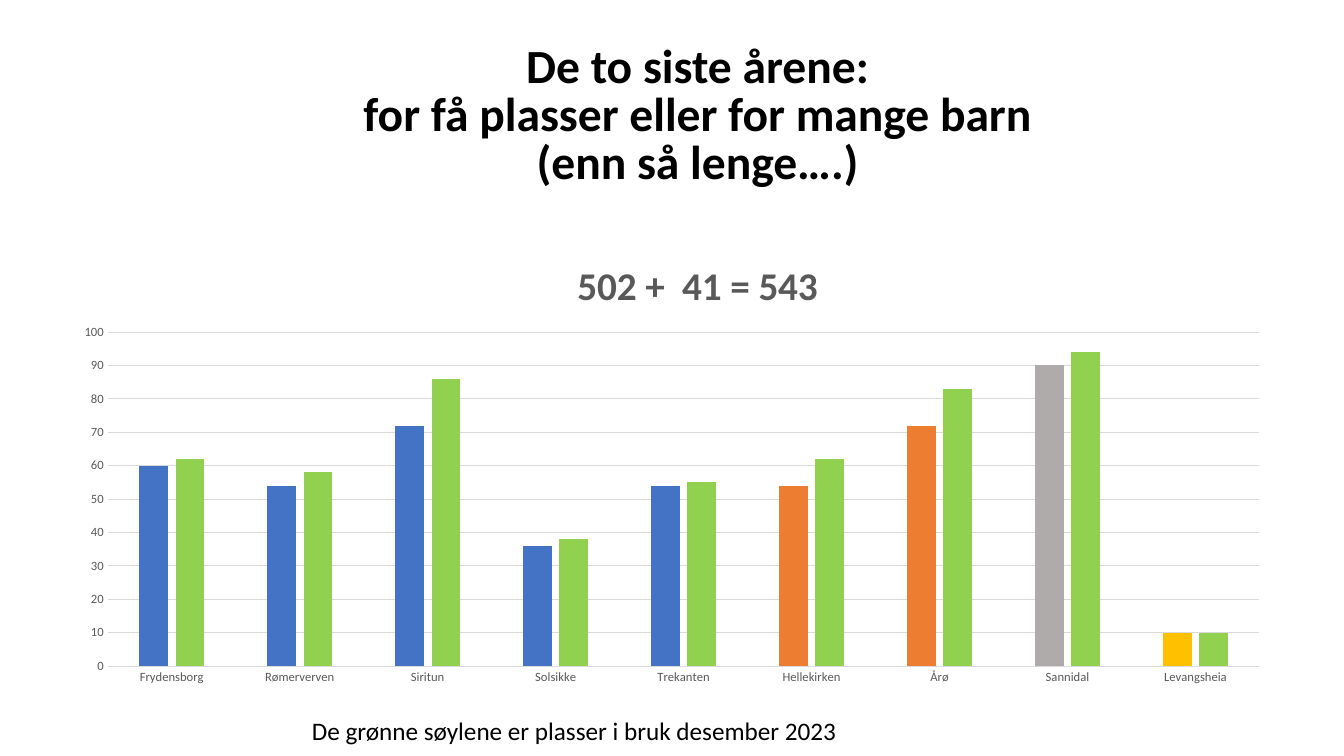
from dataclasses import dataclass

from lxml import etree
from pptx import Presentation
from pptx.chart.data import CategoryChartData
from pptx.dml.color import RGBColor
from pptx.enum.chart import XL_CHART_TYPE, XL_TICK_MARK
from pptx.enum.text import MSO_ANCHOR, PP_ALIGN
from pptx.oxml.ns import qn
from pptx.util import Emu, Pt

CLUSTERED = XL_CHART_TYPE.COLUMN_CLUSTERED
NO_TICK = XL_TICK_MARK.NONE
TOP, MIDDLE = MSO_ANCHOR.TOP, MSO_ANCHOR.MIDDLE
LEFT, CENTER = PP_ALIGN.LEFT, PP_ALIGN.CENTER
EMU_PER_PX = 914400 / 100.8


@dataclass(frozen=True)
class Theme:
    font: str = "Calibri"
    ink: str = "000000"
    muted: str = "595959"
    grid: str = "D9D9D9"
    blue: str = "4472C4"
    orange: str = "ED7D31"
    grey: str = "AFABAB"
    yellow: str = "FFC000"
    green: str = "92D050"
    heading_size: int = 34
    sum_size: int = 28
    caption_size: int = 18
    axis_size: int = 9


THEME = Theme()

# Kindergarten, places, places in use, colour of the places column
KINDERGARTENS = [
    ("Frydensborg", 60, 62, THEME.blue),
    ("Rømerverven", 54, 58, THEME.blue),
    ("Siritun", 72, 86, THEME.blue),
    ("Solsikke", 36, 38, THEME.blue),
    ("Trekanten", 54, 55, THEME.blue),
    ("Hellekirken", 54, 62, THEME.orange),
    ("Årø", 72, 83, THEME.orange),
    ("Sannidal", 90, 94, THEME.grey),
    ("Levangsheia", 10, 10, THEME.yellow),
]


def px(length):
    return Emu(round(length * EMU_PER_PX))


def style_font(font, size, color, bold=False):
    font.name = THEME.font
    font.size = Pt(size)
    font.bold = bold
    font.color.rgb = RGBColor.from_string(color)


def paint(fill, color):
    fill.solid()
    fill.fore_color.rgb = RGBColor.from_string(color)


def style_line(line, color):
    paint(line.fill, color)
    line.width = Pt(0.75)


def add_text(slide, box, lines, size, bold=False, align=LEFT, anchor=TOP,
             line_spacing=None, space_after=0):
    frame = slide.shapes.add_textbox(*map(px, box)).text_frame
    frame.word_wrap = True
    frame.vertical_anchor = anchor
    for index, line in enumerate(lines):
        paragraph = frame.add_paragraph() if index else frame.paragraphs[0]
        paragraph.alignment = align
        paragraph.line_spacing = line_spacing
        paragraph.space_after = Pt(space_after)
        run = paragraph.add_run()
        run.text = line
        style_font(run.font, size, THEME.ink, bold)


def place_manually(parent, index, **settings):
    """Give a chart part a fixed place, as fractions of the chart."""
    for old in parent.findall(qn("c:layout")):
        parent.remove(old)
    layout = etree.Element(qn("c:layout"))
    manual = etree.SubElement(layout, qn("c:manualLayout"))
    for tag, value in settings.items():
        etree.SubElement(manual, qn(f"c:{tag}")).set("val", str(value))
    parent.insert(index, layout)


def style_axes(chart):
    for axis in (chart.category_axis, chart.value_axis):
        axis.major_tick_mark = axis.minor_tick_mark = NO_TICK
        style_font(axis.tick_labels.font, THEME.axis_size, THEME.muted)
    style_line(chart.category_axis.format.line, THEME.grid)
    values = chart.value_axis
    values.minimum_scale, values.maximum_scale, values.major_unit = 0, 100, 10
    values.format.line.fill.background()
    style_line(values.major_gridlines.format.line, THEME.grid)


def add_places_chart(slide, box, title):
    names, places, in_use, colors = zip(*KINDERGARTENS)
    data = CategoryChartData()
    data.categories = names
    data.add_series("Series 1", places)
    data.add_series("Series 2", in_use)
    chart = slide.shapes.add_chart(CLUSTERED, *map(px, box), data).chart
    style_font(chart.font, 10, THEME.ink)
    chart.has_legend = False
    style_axes(chart)

    plot = chart.plots[0]
    plot.vary_by_categories = False
    plot.gap_width, plot.overlap = 219, -27
    places_series, in_use_series = plot.series
    paint(places_series.format.fill, THEME.blue)
    paint(in_use_series.format.fill, THEME.green)
    for index, color in enumerate(colors):
        if color != THEME.blue:
            paint(places_series.points[index].format.fill, color)

    chart.has_title = True
    heading = chart.chart_title.text_frame.paragraphs[0].add_run()
    heading.text = title
    style_font(heading.font, THEME.sum_size, THEME.muted, bold=True)
    chart.chart_title.include_in_layout = False
    chart_root = chart.element.find(qn("c:chart"))
    place_manually(chart_root.find(qn("c:title")), 1,
                   xMode="edge", yMode="edge", x=0.417, y=0.045)
    place_manually(chart_root.find(qn("c:plotArea")), 0,
                   layoutTarget="inner", xMode="edge", yMode="edge",
                   x=0.039, y=0.218, w=0.941, h=0.72)


def main():
    deck = Presentation()
    deck.slide_width, deck.slide_height = px(1344), px(756)
    slide = deck.slides.add_slide(deck.slide_layouts[6])
    add_text(slide, (100, 44, 1206, 151),
             ["De to siste årene: ", "for få plasser eller for mange barn ",
              "(enn så lenge….) "],
             THEME.heading_size, bold=True, align=CENTER, anchor=MIDDLE,
             line_spacing=0.7, space_after=6)
    add_places_chart(slide, (60, 231, 1224, 464), "502 +  41 = 543")
    add_text(slide, (302, 710, 719, 40),
             ["De grønne søylene er plasser i bruk desember 2023"],
             THEME.caption_size)
    deck.save("out.pptx")


if __name__ == "__main__":
    main()
